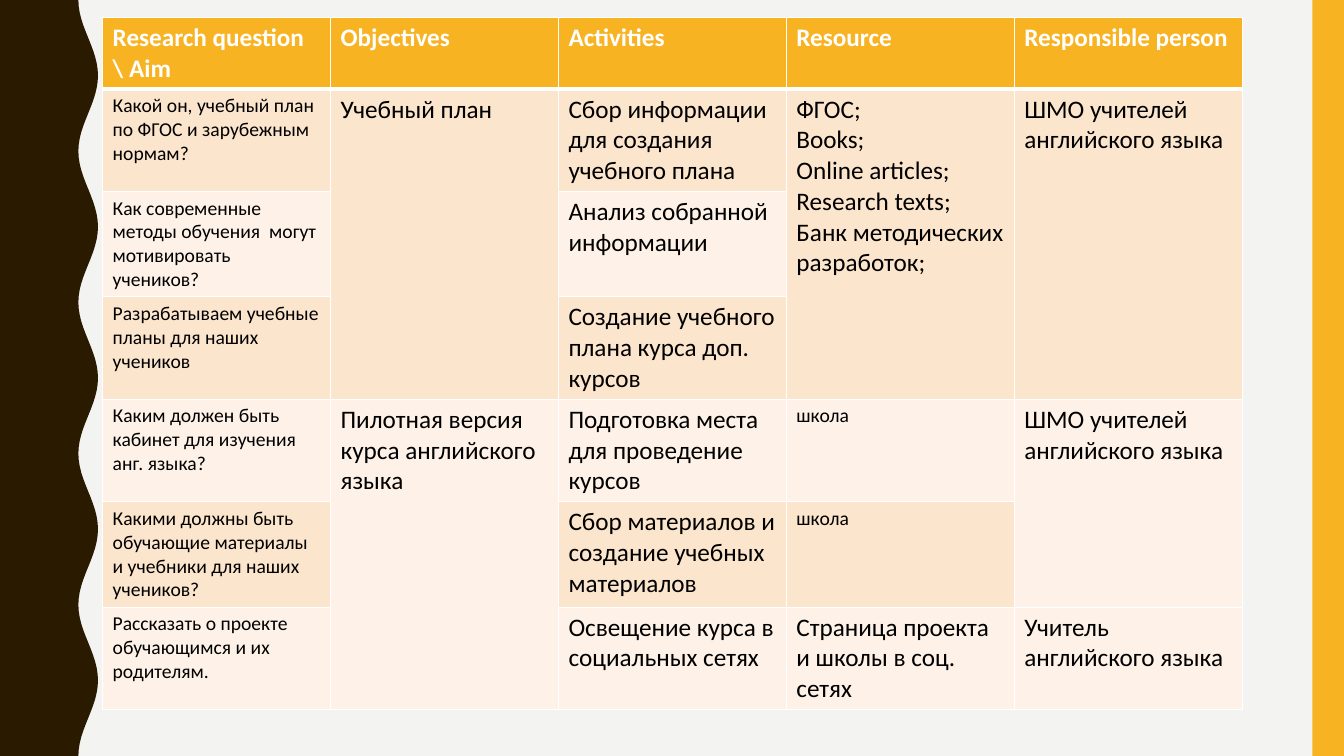
import math
from lxml import etree
from pptx import Presentation
from pptx.dml.color import RGBColor
from pptx.enum import shapes
from pptx.oxml import ns
from pptx.util import Pt

COLORS = {"back": "F3F3F2", "wave": "2A1A00", "accent": "F8B323", "dark_band": "FCE5CD",
          "light_band": "FEF2E8", "white": "FFFFFF", "black": "000000"}
HEIGHT = 540


def paint(fill, name):
    fill.solid()
    fill.fore_color.rgb = RGBColor.from_string(COLORS[name])


def add_border(cell, side, width):
    ln = etree.SubElement(cell._tc.get_or_add_tcPr(), ns.qn("a:ln" + side), w=str(Pt(width)))
    solid = etree.SubElement(ln, ns.qn("a:solidFill"))
    etree.SubElement(solid, ns.qn("a:srgbClr"), val=COLORS["white"])


prs = Presentation()
prs.slide_width, prs.slide_height = Pt(960), Pt(HEIGHT)
s = prs.slides.add_slide(prs.slide_layouts[6])
paint(s.background.fill, "back")

# Wavy left edge: five periods of a cosine down the slide
step, period = 4.5, 108
ys = [i * step for i in range(int(HEIGHT / step) + 1)]
edge = [(Pt(63 - 7 * math.cos(2 * math.pi * y / period)), Pt(y)) for y in ys]
builder = s.shapes.build_freeform(0, 0)
builder.add_line_segments(edge + [(0, Pt(HEIGHT))], close=True)
wave = builder.convert_to_shape()

# Right stripe
stripe = s.shapes.add_shape(shapes.MSO_SHAPE.RECTANGLE, Pt(937.5), 0, Pt(22.5), Pt(HEIGHT))
for sp, color in ((wave, "wave"), (stripe, "accent")):
    paint(sp.fill, color)
    sp.line.fill.background()
    sp.shadow.inherit = False

# Table text, one list per row; None continues the cell above
rows = [
    ["Research question \\ Aim", "Objectives", "Activities", "Resource", "Responsible person"],
    ["Какой он, учебный план по ФГОС и зарубежным нормам?", "Учебный план",
     "Сбор информации для создания учебного плана",
     "ФГОС;\nBooks;\nOnline articles;\nResearch texts;\nБанк методических разработок;",
     "ШМО учителей английского языка"],
    ["Как современные методы обучения  могут мотивировать учеников?", None,
     "Анализ собранной информации", None, None],
    ["Разрабатываем учебные планы для наших учеников", None,
     "Создание учебного плана курса доп. курсов", None, None],
    ["Каким должен быть кабинет для изучения анг. языка?",
     "Пилотная версия курса английского языка",
     "Подготовка места для проведение курсов", "школа", "ШМО учителей английского языка"],
    ["Какими должны быть обучающие материалы и учебники для наших учеников?", None,
     "Сбор материалов и создание учебных материалов", "школа", None],
    ["Рассказать о проекте обучающимся и их родителям.", None,
     "Освещение курса в социальных сетях", "Страница проекта и школы в соц. сетях",
     "Учитель английского языка"],
]
table = s.shapes.add_table(len(rows), 5, Pt(73.3), Pt(12.4), Pt(814), Pt(488)).table
table.horz_banding = False
for column in table.columns:
    column.width = Pt(162.8)

for i, row in enumerate(rows):
    table.rows[i].height = Pt(73 if i else 50)
    for j, words in enumerate(row):
        cell = table.cell(i, j)

        # Borders: a thick rule under the header
        for side in "LRTB":
            add_border(cell, side, 3 if (i, side) in ((0, "B"), (1, "T")) else 1)

        # Fill: header, then alternating bands
        paint(cell.fill, "accent" if i == 0 else "dark_band" if i % 2 else "light_band")
        if words is None:
            continue

        # Text: questions and the short resource notes are smaller
        small = i > 0 and (j == 0 or words == "школа")
        tf = cell.text_frame
        for k, line in enumerate(words.split("\n")):
            p = tf.add_paragraph() if k else tf.paragraphs[0]
            r = p.add_run()
            r.text = line
            r.font.name = "Calibri"
            r.font.size = Pt(14 if small else 18)
            r.font.bold = i == 0
            r.font.color.rgb = RGBColor.from_string(COLORS["black" if i else "white"])

# Merge each cell with the empty ones below it
for j in range(5):
    for i, row in enumerate(rows):
        last = i
        while row[j] and last + 1 < len(rows) and rows[last + 1][j] is None:
            last += 1
        if last > i:
            table.cell(i, j).merge(table.cell(last, j))

prs.save("out.pptx")
